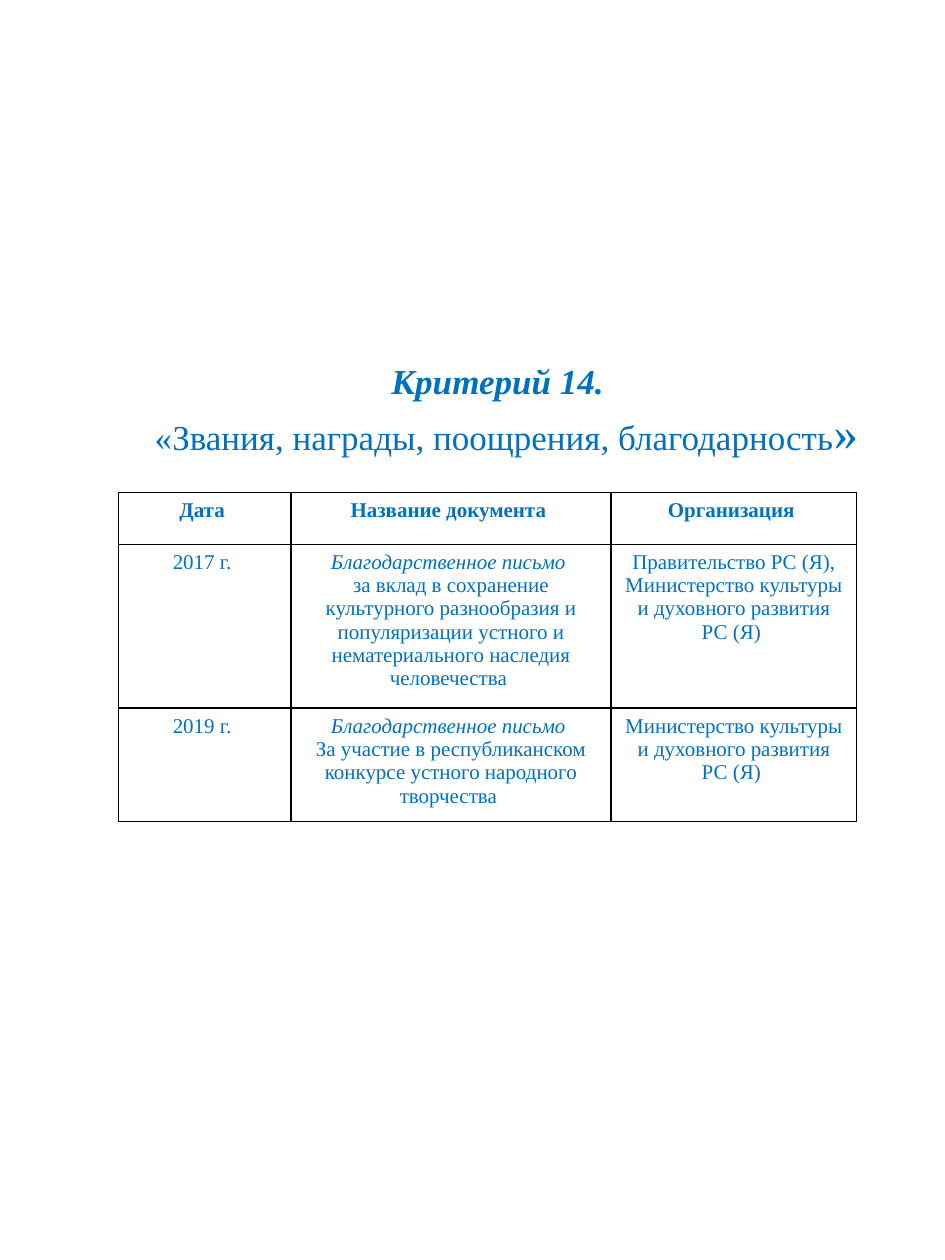
from lxml.etree import SubElement
from pptx import Presentation
from pptx.dml.color import RGBColor
from pptx.enum.text import MSO_ANCHOR, MSO_AUTO_SIZE, PP_ALIGN
from pptx.oxml.ns import qn
from pptx.util import Inches, Pt

# Content
HEADING = "Критерий 14. "
SUBJECT = " «Звания, награды, поощрения, благодарность"
CLOSING_QUOTE = "»"
LETTER = "Благодарственное письмо "
# Each cell is a list of paragraphs
ROWS = [
    [["Дата "], ["Название документа "], ["Организация "]],
    [["2017 г. "],
     [LETTER, "за вклад в сохранение культурного разнообразия и популяризации "
              "устного и нематериального наследия человечества "],
     ["Правительство РС (Я), Министерство культуры и духовного развития РС (Я) "]],
    [["2019 г. "],
     [LETTER, "За участие в республиканском конкурсе устного народного творчества "],
     ["Министерство культуры и духовного развития РС (Я) "]],
]
COL_WIDTHS = [1.37, 2.54, 1.95]
ROW_HEIGHTS = [0.41, 1.3, 0.9]

THEME = {
    "font": "Times New Roman",
    "text": RGBColor(0x00, 0x70, 0xC0),
    "border": "000000",
    "border_pt": 1,
    "title": 20,
    "quote": 28,
    "body": 12,
}


def add_run(p, text, size, bold=False, italic=False):
    r = p.add_run()
    r.text = text
    r.font.name = THEME["font"]
    r.font.size = Pt(size)
    r.font.color.rgb = THEME["text"]
    r.font.bold = bold
    r.font.italic = italic


def add_borders(cell):
    tcPr = cell._tc.get_or_add_tcPr()
    for i, side in enumerate(("lnL", "lnR", "lnT", "lnB")):
        ln = SubElement(tcPr, qn(f"a:{side}"), w=str(Pt(THEME["border_pt"])))
        fill = SubElement(ln, qn("a:solidFill"))
        SubElement(fill, qn("a:srgbClr"), val=THEME["border"])
        tcPr.remove(ln)
        tcPr.insert(i, ln)  # borders come before the fill


def add_title(s):
    title = s.shapes.title
    title.left, title.top = Inches(0.68), Inches(2.8)
    title.width, title.height = Inches(6.61), Inches(0.91)
    tf = title.text_frame
    tf.word_wrap = True
    tf.auto_size = MSO_AUTO_SIZE.SHAPE_TO_FIT_TEXT
    tf.vertical_anchor = MSO_ANCHOR.TOP
    p = tf.paragraphs[0]
    p.alignment = PP_ALIGN.CENTER
    add_run(p, HEADING, THEME["title"], bold=True, italic=True)
    p.add_line_break()
    add_run(p, SUBJECT, THEME["title"])
    add_run(p, CLOSING_QUOTE, THEME["quote"])


def add_awards_table(s):
    table = s.shapes.add_table(
        len(ROWS), len(COL_WIDTHS), Inches(0.94), Inches(3.91),
        Inches(sum(COL_WIDTHS)), Inches(sum(ROW_HEIGHTS))).table
    table.horz_banding = False
    for col, width in zip(table.columns, COL_WIDTHS):
        col.width = Inches(width)
    for row, height in zip(table.rows, ROW_HEIGHTS):
        row.height = Inches(height)
    for i, row in enumerate(ROWS):
        for j, paragraphs in enumerate(row):
            cell = table.cell(i, j)
            cell.fill.background()
            add_borders(cell)
            tf = cell.text_frame
            for n, text in enumerate(paragraphs):
                p = tf.add_paragraph() if n else tf.paragraphs[0]
                p.alignment = PP_ALIGN.CENTER
                add_run(p, text, THEME["body"], bold=i == 0, italic=text == LETTER)


def main():
    prs = Presentation()
    prs.slide_width, prs.slide_height = Inches(7.5), Inches(10)
    s = prs.slides.add_slide(prs.slide_layouts[5])
    add_title(s)
    add_awards_table(s)
    prs.save("out.pptx")


if __name__ == "__main__":
    main()
